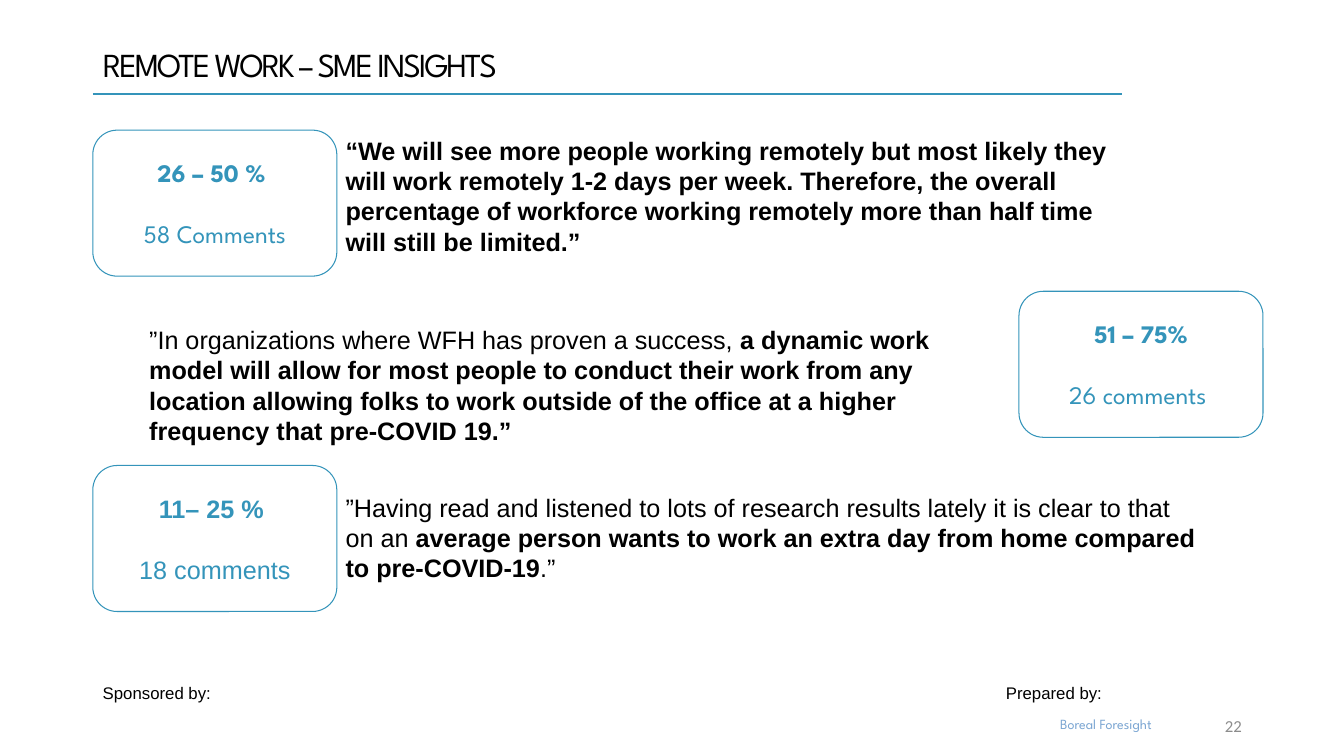
from dataclasses import dataclass

import lxml.etree
import pptx
import pptx.dml.color
import pptx.enum.shapes
import pptx.enum.text
import pptx.oxml.ns
import pptx.presentation
import pptx.shapes.autoshape
import pptx.slide
import pptx.text.text
import pptx.util
from pptx.util import Cm, Pt

BLACK = pptx.dml.color.RGBColor(0x00, 0x00, 0x00)
TEAL = pptx.dml.color.RGBColor(0x34, 0x94, 0xBA)
PALE_BLUE = pptx.dml.color.RGBColor(0x7A, 0xA5, 0xD2)
GREY = pptx.dml.color.RGBColor(0x8C, 0x8C, 0x8C)

BODY_FONT = "Arial"
DISPLAY_FONT = "League Spartan"
LEFT_MARGIN = 2.34
RULE_TOP = 2.36
CARD_WIDTH = 6.15
CARD_HEIGHT = 3.68
CARD_PARAGRAPH_GAP = 22

ALIGN = pptx.enum.text.PP_ALIGN
MIDDLE = pptx.enum.text.MSO_ANCHOR.MIDDLE


@dataclass(frozen=True)
class Span:
    text: str
    bold: bool = False


@dataclass(frozen=True)
class TextBlock:
    left: float
    top: float
    width: float
    height: float
    spans: tuple[Span, ...]
    size: float = 18
    font: str = BODY_FONT
    color: pptx.dml.color.RGBColor = BLACK
    alignment: ALIGN = ALIGN.LEFT


@dataclass(frozen=True)
class ShareCard:
    left: float
    top: float
    share: str
    comments: str
    font: str = DISPLAY_FONT


TEXT_BLOCKS = (
    TextBlock(LEFT_MARGIN, 17.09, 3.51, 0.76, (Span("Sponsored by:"),), 12),
    TextBlock(25.1, 17.09, 3.51, 0.76, (Span("Prepared by:"),), 12),
    TextBlock(26.47, 17.91, 3.51, 0.69, (Span("Boreal Foresight"),), 10, DISPLAY_FONT, PALE_BLUE),
    TextBlock(23.93, 17.9, 7.62, 0.76, (Span("22"),), 12, "Calibri", GREY, ALIGN.RIGHT),
    TextBlock(8.46, 3.28, 19.81, 3.33, (
        Span("“We will see more people working remotely but most likely they will work "
             "remotely 1-2 days per week. Therefore, the overall percentage of workforce "
             "working remotely more than half time will still be limited.”", True),
    )),
    TextBlock(3.51, 8.05, 22.17, 3.33, (
        Span("”In organizations where WFH has proven a success, "),
        Span("a dynamic work model will allow for most people to conduct their work from any "
             "location allowing folks to work outside of the office at a higher frequency "
             "that pre-COVID 19.”", True),
    )),
    TextBlock(8.46, 12.27, 22.17, 2.57, (
        Span("”Having read and listened to lots of research results lately it is clear to "
             "that on an "),
        Span("average person wants to work an extra day from home compared to pre-COVID-19", True),
        Span(".”"),
    )),
)

SHARE_CARDS = (
    ShareCard(LEFT_MARGIN, 3.28, "26 – 50 % ", "58 Comments"),
    ShareCard(25.68, 7.34, "51 – 75%", "26 comments "),
    ShareCard(LEFT_MARGIN, 11.73, "11– 25 % ", "18 comments", BODY_FONT),
)


def format_paragraph(
    paragraph: pptx.text.text._Paragraph,
    font: str,
    size: float,
    color: pptx.dml.color.RGBColor,
    alignment: ALIGN = ALIGN.LEFT,
    bold: bool | None = None,
) -> None:
    paragraph.alignment = alignment
    paragraph.font.name = font
    paragraph.font.size = Pt(size)
    paragraph.font.color.rgb = color
    paragraph.font.bold = bold


def format_title(slide: pptx.slide.Slide) -> None:
    title = slide.shapes.title
    title.left, title.top, title.width, title.height = Cm(LEFT_MARGIN), Cm(1.02), Cm(25.96), Cm(1.34)
    title.text_frame.text = "REMOTE WORK – SME INSIGHTS"
    title.text_frame.vertical_anchor = MIDDLE
    paragraph = title.text_frame.paragraphs[0]
    paragraph.line_spacing = 0.9
    format_paragraph(paragraph, DISPLAY_FONT, 24, BLACK)
    paragraph.runs[0]._r.get_or_add_rPr().set("spc", "-150")


def add_title_rule(slide: pptx.slide.Slide) -> None:
    rule = slide.shapes.add_connector(
        pptx.enum.shapes.MSO_CONNECTOR.STRAIGHT,
        Cm(LEFT_MARGIN), Cm(RULE_TOP), Cm(28.27), Cm(RULE_TOP),
    )
    rule.line.color.rgb = TEAL
    rule.line.width = Pt(1.5)
    lxml.etree.SubElement(rule._element.spPr, pptx.oxml.ns.qn("a:effectLst"))


def add_text_block(slide: pptx.slide.Slide, block: TextBlock) -> None:
    shape = slide.shapes.add_textbox(Cm(block.left), Cm(block.top), Cm(block.width), Cm(block.height))
    shape.text_frame.word_wrap = True
    paragraph = shape.text_frame.paragraphs[0]
    format_paragraph(paragraph, block.font, block.size, block.color, block.alignment)
    for span in block.spans:
        run = paragraph.add_run()
        run.text = span.text
        if span.bold:
            run.font.bold = True


def add_share_card(slide: pptx.slide.Slide, card: ShareCard) -> None:
    shape = slide.shapes.add_shape(
        pptx.enum.shapes.MSO_SHAPE.ROUNDED_RECTANGLE,
        Cm(card.left), Cm(card.top), Cm(CARD_WIDTH), Cm(CARD_HEIGHT),
    )
    shape.shadow.inherit = False
    shape.fill.background()
    shape.line.color.rgb = TEAL
    shape.line.width = Pt(0.75)
    frame = shape.text_frame
    frame.word_wrap = True
    frame.vertical_anchor = MIDDLE
    share = frame.paragraphs[0]
    share.text = card.share
    format_paragraph(share, card.font, 18, TEAL, ALIGN.CENTER, True)
    comments = frame.add_paragraph()
    comments.text = card.comments
    comments.space_before = Pt(CARD_PARAGRAPH_GAP)
    format_paragraph(comments, card.font, 18, TEAL, ALIGN.CENTER, False)


def main() -> None:
    presentation = pptx.Presentation()
    presentation.slide_width = Cm(33.87)
    presentation.slide_height = Cm(19.05)
    slide = presentation.slides.add_slide(presentation.slide_layouts.get_by_name("Title Only"))
    format_title(slide)
    add_title_rule(slide)
    for block in TEXT_BLOCKS:
        add_text_block(slide, block)
    for card in SHARE_CARDS:
        add_share_card(slide, card)
    presentation.save("out.pptx")


if __name__ == "__main__":
    main()
